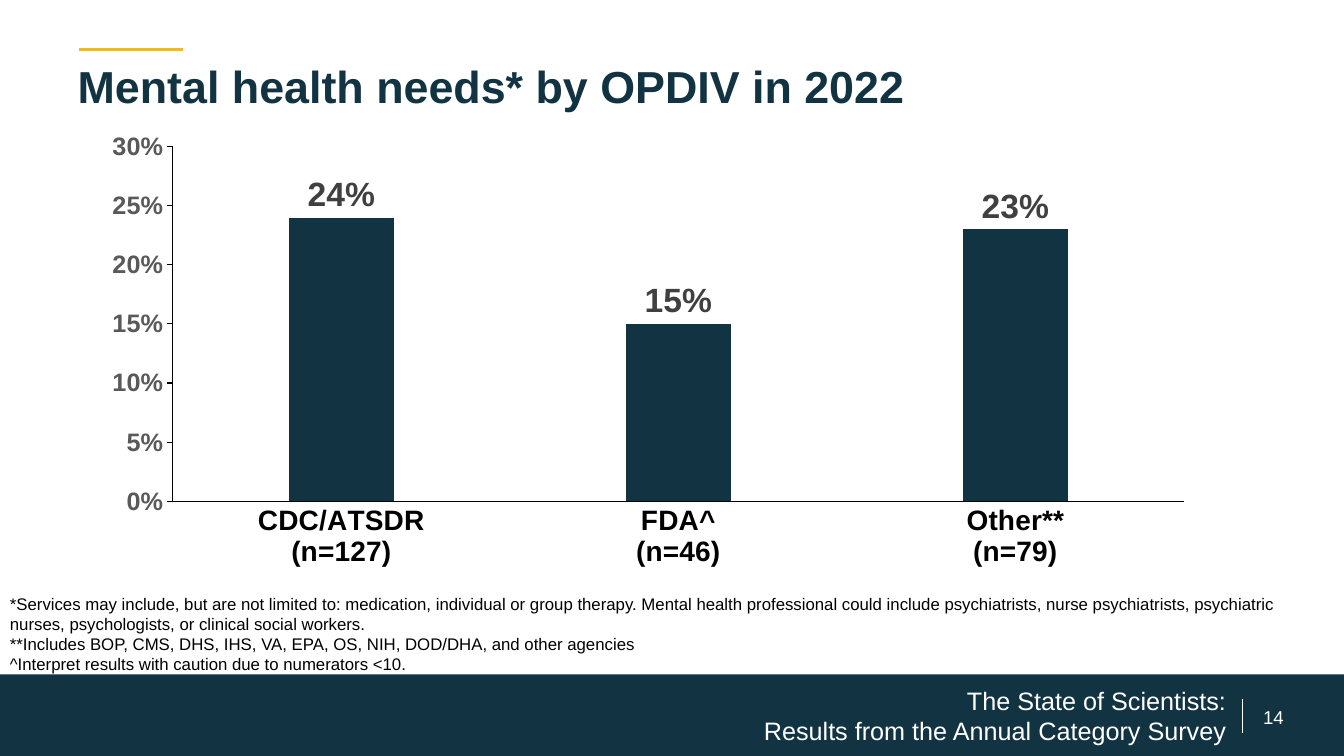
"""Build the slide on mental health needs by OPDIV, with a column chart and notes."""
from lxml.etree import SubElement as Sub
from pptx import Presentation
from pptx.chart.data import CategoryChartData as Data
from pptx.dml.color import RGBColor as RGB
from pptx.enum.chart import XL_CHART_TYPE as Kind, XL_LABEL_POSITION as Spot, XL_TICK_MARK as Tick
from pptx.enum.shapes import MSO_CONNECTOR as Conn, MSO_SHAPE as Shape
from pptx.enum.text import MSO_ANCHOR as Anchor, MSO_AUTO_SIZE as Fit, PP_ALIGN as Align
from pptx.oxml.ns import qn
from pptx.util import Inches, Pt

TITLE = "Mental health needs* by OPDIV in 2022"
BARS = {"CDC/ATSDR\n(n=127)": 0.24, "FDA^\n(n=46)": 0.15, "Other**\n(n=79)": 0.23}
NOTES = [
    "*Services may include, but are not limited to: medication, individual or group therapy. "
    "Mental health professional could include psychiatrists, nurse psychiatrists, psychiatric "
    "nurses, psychologists, or clinical social workers.",
    "**Includes BOP, CMS, DHS, IHS, VA, EPA, OS, NIH, DOD/DHA, and other agencies",
    "^Interpret results with caution due to numerators <10.",
]
FOOTER = "The State of Scientists:\vResults from the Annual Category Survey"
PAGE = "14"
PLOT = {"x": 0.093, "y": 0.054, "w": 0.893, "h": 0.742}

NAVY = RGB(0x12, 0x33, 0x42)
GOLD = RGB(0xF4, 0xBA, 0x18)
WHITE = RGB(0xFF, 0xFF, 0xFF)
BLACK = RGB(0, 0, 0)
GRAY = RGB(0x59, 0x59, 0x59)
DARK = RGB(0x40, 0x40, 0x40)
WIDE, HIGH = 13.33, 7.5
BAND = 6.69
LEFT = 0.67


def box(*sides):
    return [Inches(side) for side in sides]


def style(font, size, color, bold=False):
    font.name, font.size, font.bold = "Arial", Pt(size), bold
    font.color.rgb = color


def rule(shapes, ends, color, width):
    line = shapes.add_connector(Conn.STRAIGHT, *box(*ends))
    line.line.color.rgb, line.line.width = color, Pt(width)
    Sub(line._element.spPr, qn("a:effectLst"))


def write(shape, lines, size, color, align=Align.LEFT, anchor=Anchor.TOP, bold=False):
    frame = shape.text_frame
    frame.word_wrap, frame.auto_size = True, Fit.NONE
    frame.vertical_anchor = anchor
    frame.text = "\n".join(lines)
    for para in frame.paragraphs:
        para.alignment = align
        style(para.font, size, color, bold)


def axis(ax, size, color, tick):
    style(ax.tick_labels.font, size, color, True)
    ax.format.line.color.rgb, ax.format.line.width = BLACK, Pt(0.75)
    ax.major_tick_mark, ax.minor_tick_mark = tick, Tick.NONE
    ax.has_major_gridlines = False


def place(chart):
    area = chart._chartSpace.find(".//" + qn("c:plotArea"))
    for old in area.findall(qn("c:layout")):
        area.remove(old)
    layout = Sub(area, qn("c:layout"))
    area.insert(0, layout)
    manual = Sub(layout, qn("c:manualLayout"))
    modes = {"layoutTarget": "inner", "xMode": "edge", "yMode": "edge"}
    for tag, value in {**modes, **PLOT}.items():
        Sub(manual, qn("c:" + tag)).set("val", str(value))


def draw(shapes):
    data = Data(number_format="0%")
    data.categories = list(BARS)
    data.add_series("Series 1", list(BARS.values()))
    chart = shapes.add_chart(Kind.COLUMN_CLUSTERED, *box(LEFT, 1.2, 11.23, 4.74), data).chart
    style(chart.font, 10, BLACK)
    chart.has_legend = chart.has_title = False
    axis(chart.category_axis, 20, BLACK, Tick.NONE)
    scale = chart.value_axis
    axis(scale, 18, GRAY, Tick.OUTSIDE)
    scale.minimum_scale, scale.maximum_scale, scale.major_unit = 0, 0.3, 0.05
    scale.tick_labels.number_format = "0%"
    scale.tick_labels.number_format_is_linked = False
    plot = chart.plots[0]
    plot.gap_width, plot.overlap, plot.vary_by_categories = 219, -27, False
    fill = plot.series[0].format.fill
    fill.solid()
    fill.fore_color.rgb = NAVY
    plot.has_data_labels = True
    labels = plot.data_labels
    labels.show_value, labels.position = True, Spot.OUTSIDE_END
    labels.number_format, labels.number_format_is_linked = "0%", False
    style(labels.font, 24, DARK, True)
    place(chart)


def main():
    deck = Presentation()
    deck.slide_width, deck.slide_height = box(WIDE, HIGH)
    slide = deck.slides.add_slide(deck.slide_layouts[5])
    shapes = slide.shapes

    rule(shapes, (0.78, 0.49, 1.82, 0.49), GOLD, 2.5)
    band = shapes.add_shape(Shape.RECTANGLE, *box(0, BAND, WIDE, HIGH - BAND))
    band.shadow.inherit = False
    band.fill.solid()
    band.fill.fore_color.rgb = NAVY
    band.line.fill.background()
    rule(shapes, (12.32, 6.93, 12.32, 7.27), WHITE, 0.75)
    draw(shapes)

    title = shapes.title
    title.left, title.top, title.width, title.height = box(LEFT, 0.53, 12, 0.97)
    write(title, [TITLE], 32, NAVY, bold=True)
    write(shapes.add_textbox(*box(0, 5.84, 13.13, 0.91)), NOTES, 12, BLACK)
    write(shapes.add_textbox(*box(3.75, 6.93, 8.51, 0.33)), [FOOTER], 18, WHITE,
          Align.RIGHT, Anchor.MIDDLE)
    write(shapes.add_textbox(*box(12.24, 6.97, 0.78, 0.28)), [PAGE], 13.3, WHITE,
          Align.CENTER, Anchor.MIDDLE)
    deck.save("out.pptx")


if __name__ == "__main__":
    main()
